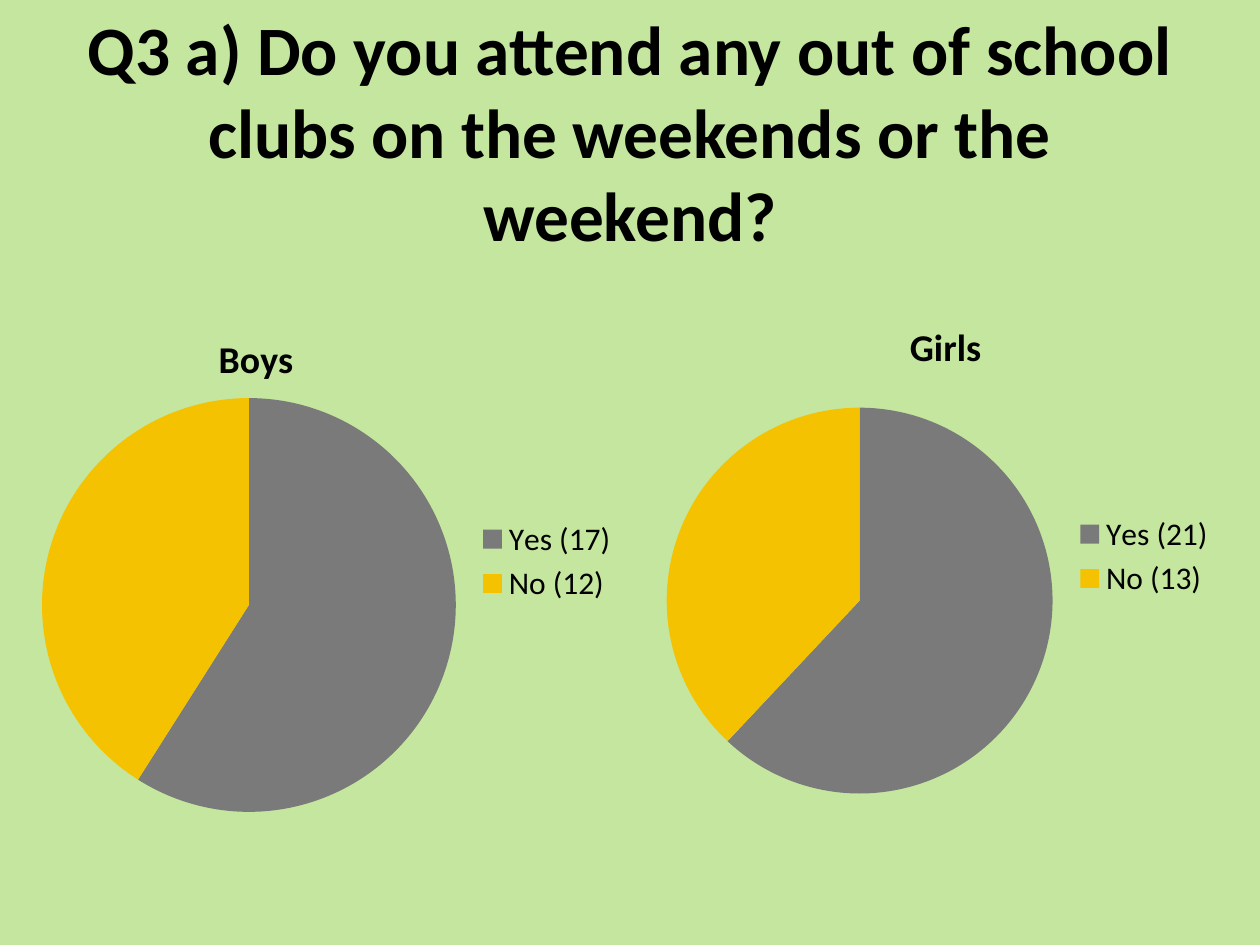
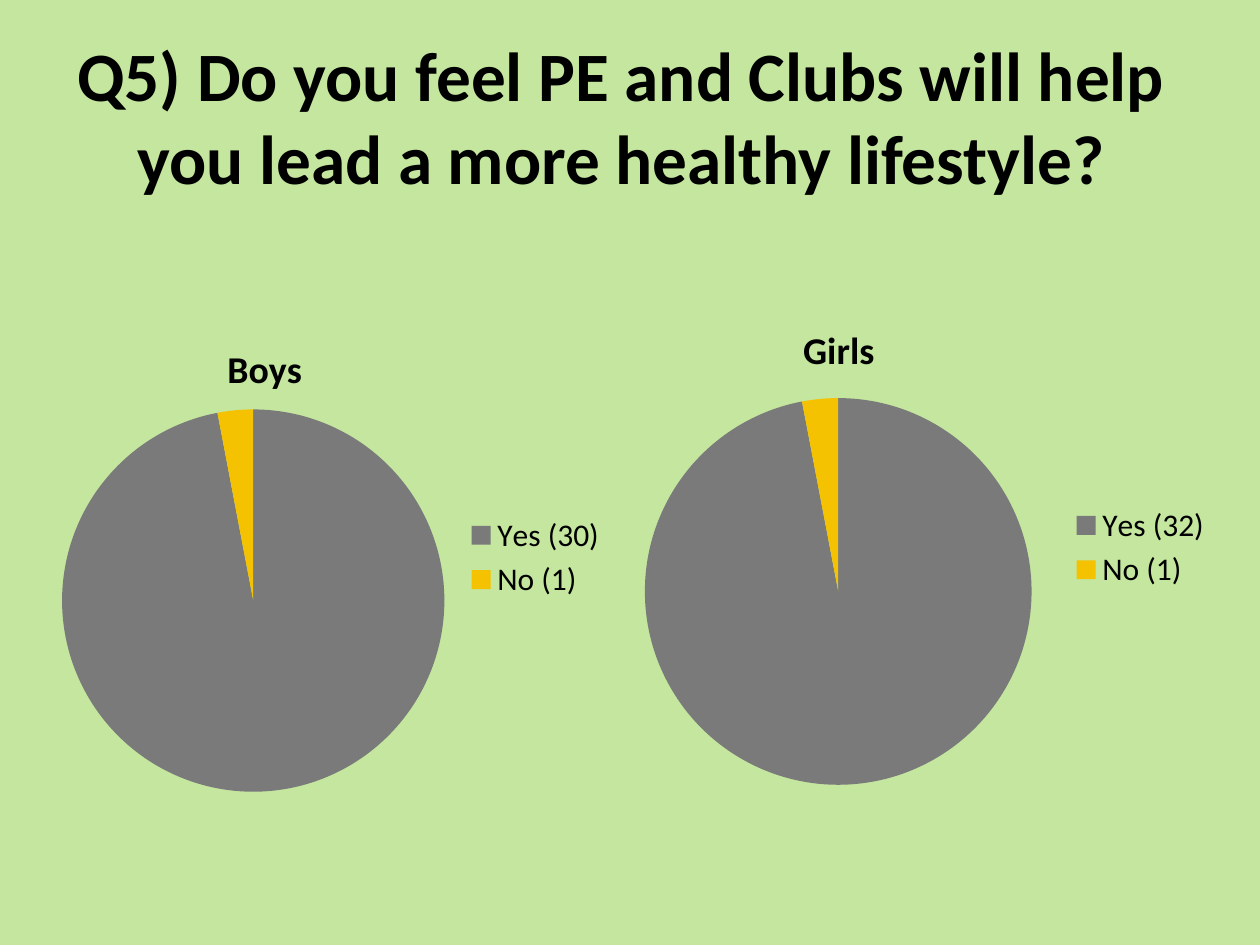
import lxml.etree
import pptx
import pptx.chart.data
import pptx.dml.color
import pptx.enum.chart
import pptx.enum.text
import pptx.util
from pptx.oxml.ns import qn

COLORS = {
    "background": "C4E69E",
    "text": "000000",
    "yes": "7A7A7A",
    "no": "F5C201",
}
FONT = "Calibri"
TITLE_SIZE = 39.6
HEADING_SIZE = 21.6
LEGEND_SIZE = 18
SLIDE_SIZE = (720, 540)

QUESTIONS = [
    {
        "title": "Q3 a) Do you attend any out of school clubs on the weekends or the weekend?",
        "title_box": (36, 21.6, 648, 106.6),
        "charts": [
            {"name": "Boys", "counts": (17, 12), "percents": (59, 41),
             "frame": (14.4, 167.8, 346.3, 306), "heading": (121, 186), "pie": (24, 227.5, 236.5)},
            {"name": "Girls", "counts": (21, 13), "percents": (62, 38),
             "frame": (371.5, 162, 330.5, 311.8), "heading": (516, 179), "pie": (381, 233, 220.5)},
        ],
    },
    {
        "title": "Q5) Do you feel PE and Clubs will help you lead a more healthy lifestyle?",
        "title_box": (31, 20.9, 648, 90),
        "charts": [
            {"name": "Boys", "counts": (30, 1), "percents": (97, 3),
             "frame": (25.2, 151.2, 329, 334.8), "heading": (126, 191.5), "pie": (35.5, 234, 218.5)},
            {"name": "Girls", "counts": (32, 1), "percents": (97, 3),
             "frame": (348.5, 167.8, 351.4, 290.2), "heading": (455, 181), "pie": (368.5, 227.5, 221)},
        ],
    },
]


def color(name):
    return pptx.dml.color.RGBColor.from_string(COLORS[name])


def style_font(font, size, bold):
    font.name = FONT
    font.size = pptx.util.Pt(size)
    font.bold = bold
    font.color.rgb = color("text")


def add_run(paragraph, text, size):
    run = paragraph.add_run()
    run.text = text
    style_font(run.font, size, True)


def place_part(element, index, frame, left, top, diameter=None):
    for layout in element.findall(qn("c:layout")):
        element.remove(layout)
    layout = lxml.etree.Element(qn("c:layout"))
    manual = lxml.etree.SubElement(layout, qn("c:manualLayout"))
    frame_left, frame_top, frame_width, frame_height = frame
    settings = [("xMode", "edge"), ("yMode", "edge"),
                ("x", (left - frame_left) / frame_width),
                ("y", (top - frame_top) / frame_height)]
    if diameter:
        settings.insert(0, ("layoutTarget", "inner"))
        settings += [("w", diameter / frame_width), ("h", diameter / frame_height)]
    for name, value in settings:
        lxml.etree.SubElement(manual, qn("c:" + name)).set("val", str(value))
    element.insert(index, layout)


def add_title(slide, question):
    title = slide.shapes.title
    title.left, title.top, title.width, title.height = map(pptx.util.Pt, question["title_box"])
    text_frame = title.text_frame
    text_frame.word_wrap = True
    text_frame.vertical_anchor = pptx.enum.text.MSO_ANCHOR.MIDDLE
    paragraph = text_frame.paragraphs[0]
    paragraph.alignment = pptx.enum.text.PP_ALIGN.CENTER
    add_run(paragraph, question["title"], TITLE_SIZE)


def add_pie(slide, answers):
    data = pptx.chart.data.CategoryChartData()
    data.categories = [f"{label} ({count})" for label, count in zip(("Yes", "No"), answers["counts"])]
    data.add_series(answers["name"], answers["percents"])
    frame = answers["frame"]
    chart = slide.shapes.add_chart(
        pptx.enum.chart.XL_CHART_TYPE.PIE, *map(pptx.util.Pt, frame), data).chart
    style_font(chart.font, LEGEND_SIZE, False)

    chart.has_title = True
    heading = chart.chart_title
    add_run(heading.text_frame.paragraphs[0], answers["name"], HEADING_SIZE)
    place_part(heading.element, 1, frame, *answers["heading"])
    place_part(chart.element.find(".//" + qn("c:plotArea")), 0, frame, *answers["pie"])

    chart.has_legend = True
    chart.legend.position = pptx.enum.chart.XL_LEGEND_POSITION.RIGHT
    chart.legend.include_in_layout = False

    plot = chart.plots[0]
    plot.vary_by_categories = True
    for index, answer in enumerate(("yes", "no")):
        point_format = plot.series[0].points[index].format
        point_format.fill.solid()
        point_format.fill.fore_color.rgb = color(answer)
        point_format.line.fill.background()


def main():
    presentation = pptx.Presentation()
    presentation.slide_width, presentation.slide_height = map(pptx.util.Pt, SLIDE_SIZE)
    background = presentation.slide_master.background.fill
    background.solid()
    background.fore_color.rgb = color("background")
    for question in QUESTIONS:
        slide = presentation.slides.add_slide(presentation.slide_layouts[5])
        add_title(slide, question)
        for answers in question["charts"]:
            add_pie(slide, answers)
    presentation.save("out.pptx")


if __name__ == "__main__":
    main()
